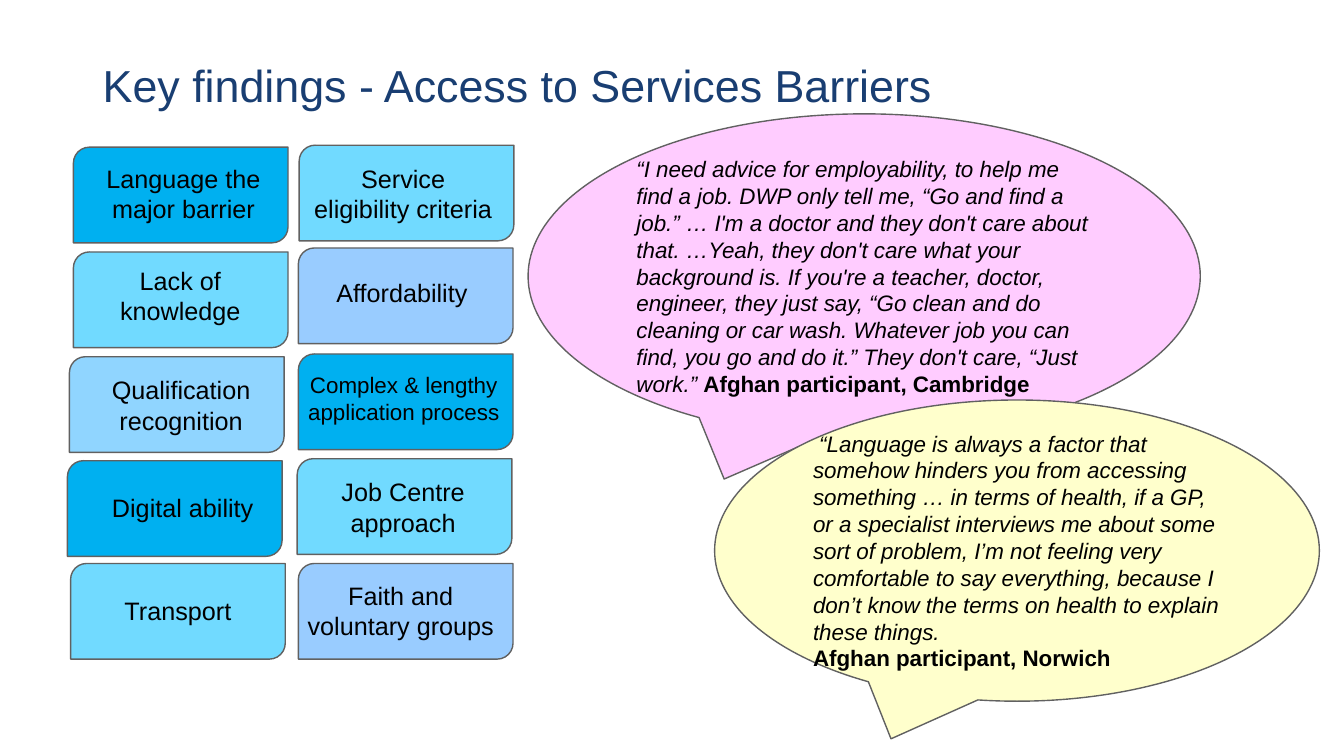
from pptx import Presentation
from pptx.dml.color import RGBColor
from pptx.enum.shapes import MSO_SHAPE
from pptx.enum.text import MSO_ANCHOR, MSO_AUTO_SIZE, PP_ALIGN
from pptx.util import Cm, Pt

CARD = MSO_SHAPE.ROUND_2_DIAG_RECTANGLE
CALLOUT = MSO_SHAPE.OVAL_CALLOUT
MIDDLE = MSO_ANCHOR.MIDDLE
GROW = MSO_AUTO_SIZE.SHAPE_TO_FIT_TEXT
LEFT, CENTER = PP_ALIGN.LEFT, PP_ALIGN.CENTER

FONT = "Arial"
COLORS = {
    "title": "193E72", "text": "000000", "outline": "616161",
    "blue": "00B0F0", "aqua": "71DAFF", "sky": "90D5FF", "periwinkle": "99CCFF",
    "pink": "FFCCFF", "yellow": "FFFFCC",
}

TITLE = "Key findings - Access to Services Barriers"
TITLE_BOX = (2.34, 1.02, 29.21, 2.41)

CARD_SIZE = (5.41, 2.41)
# text, font size, fill, card (left, top), label (left, top, width, height)
BARRIERS = [
    ("Language the major barrier", 18, "blue", (1.85, 3.71), (2.11, 3.99, 5.03, 1.8)),
    ("Service eligibility criteria", 18, "aqua", (7.54, 3.66), (7.62, 3.99, 5.08, 1.8)),
    ("Lack of knowledge", 18, "aqua", (1.85, 6.35), (2.21, 6.55, 4.67, 1.8)),
    ("Affordability", 18, "periwinkle", (7.52, 6.25), (7.92, 6.86, 4.42, 1.02)),
    ("Qualification recognition", 18, "sky", (1.75, 8.99), (2.34, 9.32, 4.45, 1.8)),
    ("Complex & lengthy application process", 16, "blue", (7.52, 8.92), (7.47, 9.22, 5.41, 1.62)),
    ("Digital ability", 18, "blue", (1.7, 11.61), (2.41, 12.29, 4.39, 1.02)),
    ("Job Centre approach", 18, "aqua", (7.49, 11.56), (7.9, 11.89, 4.52, 1.8)),
    ("Transport", 18, "aqua", (1.78, 14.2), (2.26, 14.88, 4.45, 1.02)),
    ("Faith and voluntary groups", 18, "periwinkle", (7.52, 14.2), (7.32, 14.5, 5.56, 1.8)),
]

# fill, box, paragraphs of (text, is speaker) runs
QUOTES = [
    ("pink", (13.31, 2.87, 16.94, 8.18), [[
        ("“I need advice for employability, to help me find a job. DWP only tell me, "
         "“Go and find a job.” … I'm a doctor and they don't care about that. "
         "…Yeah, they don't care what your background is. If you're a teacher, doctor, "
         "engineer, they just say, “Go clean and do cleaning or car wash. Whatever job "
         "you can find, you go and do it.” They don't care, “Just work.” ", False),
        ("Afghan participant, Cambridge", True),
    ]]),
    ("yellow", (18.01, 10.08, 15.24, 7.59), [
        [(" “Language is always a factor that somehow hinders you from accessing "
          "something … in terms of health, if a GP, or a specialist interviews me about "
          "some sort of problem, I’m not feeling very comfortable to say everything, "
          "because I don’t know the terms on health to explain these things.", False)],
        [("Afghan participant, Norwich", True)],
    ]),
]


def color(name):
    return RGBColor.from_string(COLORS[name])


def style_font(font, size, name="text"):
    font.name = FONT
    font.size = Pt(size)
    font.color.rgb = color(name)


def add_outlined_shape(slide, kind, box, fill):
    shape = slide.shapes.add_shape(kind, *map(Cm, box))
    shape.shadow.inherit = False
    shape.fill.solid()
    shape.fill.fore_color.rgb = color(fill)
    shape.line.color.rgb = color("outline")
    shape.line.width = Pt(1)
    return shape


def add_text(slide, box, text, size, name="text", alignment=CENTER):
    text_frame = slide.shapes.add_textbox(*map(Cm, box)).text_frame
    text_frame.word_wrap = True
    text_frame.text = text
    paragraph = text_frame.paragraphs[0]
    paragraph.alignment = alignment
    style_font(paragraph.runs[0].font, size, name)
    return text_frame


def add_quote(slide, fill, box, paragraphs):
    text_frame = add_outlined_shape(slide, CALLOUT, box, fill).text_frame
    text_frame.word_wrap = True
    text_frame.vertical_anchor = MIDDLE
    for index, runs in enumerate(paragraphs):
        paragraph = text_frame.add_paragraph() if index else text_frame.paragraphs[0]
        paragraph.alignment = LEFT
        for text, is_speaker in runs:
            run = paragraph.add_run()
            run.text = text
            style_font(run.font, 16)
            run.font.bold = is_speaker
            run.font.italic = not is_speaker


def main():
    presentation = Presentation()
    presentation.slide_width = Cm(33.87)
    presentation.slide_height = Cm(19.05)
    slide = presentation.slides.add_slide(presentation.slide_layouts[6])

    title_frame = add_text(slide, TITLE_BOX, TITLE, 32, "title", LEFT)
    title_frame.vertical_anchor = MIDDLE
    title_frame.paragraphs[0].line_spacing = 0.9

    for text, size, fill, position, label_box in BARRIERS:
        add_outlined_shape(slide, CARD, position + CARD_SIZE, fill)
        add_text(slide, label_box, text, size).auto_size = GROW

    for fill, box, paragraphs in QUOTES:
        add_quote(slide, fill, box, paragraphs)

    presentation.save("out.pptx")


if __name__ == "__main__":
    main()
